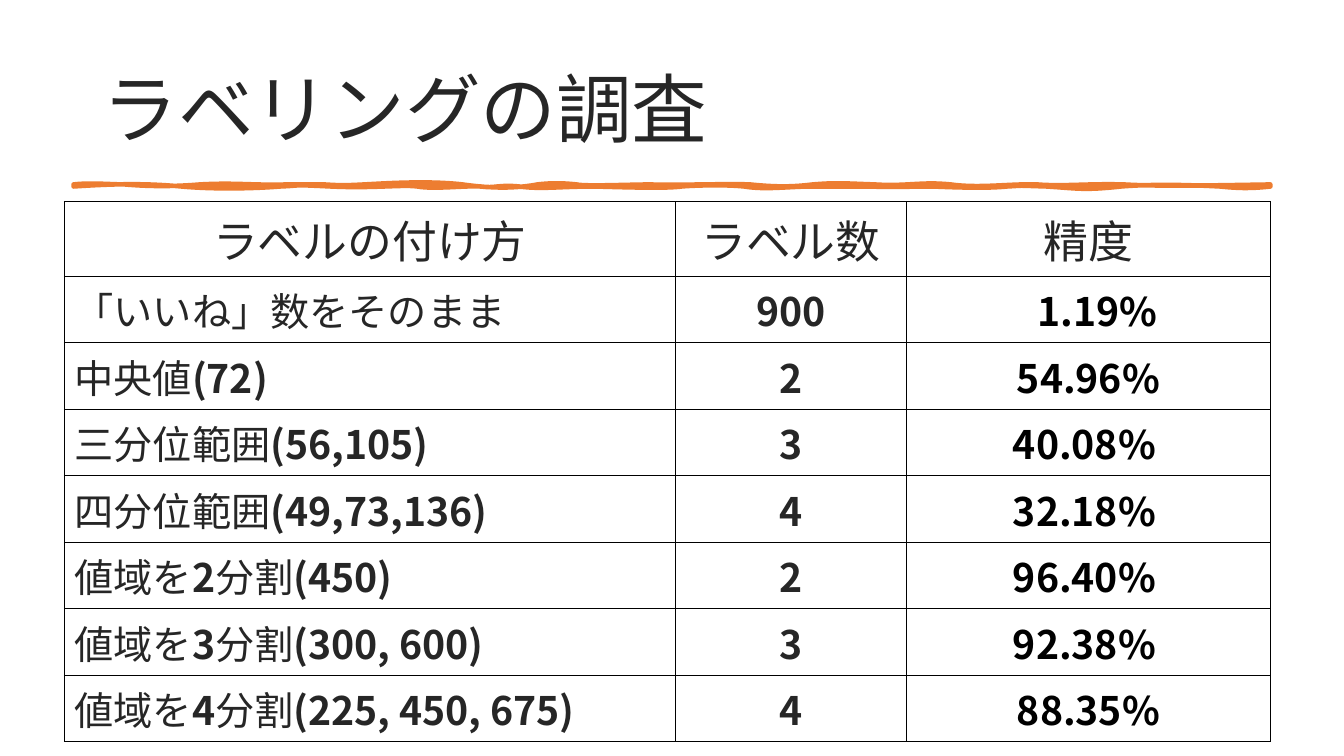
"""Build the slide that compares labelling methods by accuracy."""
import pptx
import pptx.dml.color
import pptx.enum.text
import pptx.oxml
import pptx.oxml.ns
import pptx.util

Inches = pptx.util.Inches
ALIGN = pptx.enum.text.PP_ALIGN
NAMESPACE = pptx.oxml.ns.nsdecls("a")
FONT = "Noto Sans CJK JP"
DARK = pptx.dml.color.RGBColor(0x26, 0x26, 0x26)
BLACK = pptx.dml.color.RGBColor(0, 0, 0)
ORANGE = pptx.dml.color.RGBColor(0xED, 0x7D, 0x31)

TITLE = "ラベリングの調査"
HEADERS = ["ラベルの付け方", "ラベル数", "精度"]
METHODS = [
    (["「いいね」数をそのまま"], "900", "1.19%", 0.18),
    (["中央値", "(72)"], "2", "54.96%", 0),
    (["三分位範囲", "(56,105)"], "3", "40.08%", -0.08),
    (["四分位範囲", "(49,73,136)"], "4", "32.18%", -0.08),
    (["値域を", "2", "分割", "(450)"], "2", "96.40%", -0.08),
    (["値域を", "3", "分割", "(300, 600)"], "3", "92.38%", -0.08),
    (["値域を", "4", "分割", "(225, 450, 675)"], "4", "88.35%", 0),
]
COLUMN_WIDTHS = [6.06, 2.29, 3.61]
HEADER_HEIGHT, ROW_HEIGHT = 0.74, 0.66
CELL_MARGIN = 0.1

RULE_LEFT, RULE_RIGHT, RULE_TOP, RULE_BOTTOM = 0.73, 12.6, 1.83, 1.85
TOP_CURVES = [
    (0.89, 1.81, 1.11, 1.83, 1.24), (1.36, 1.84, 1.62, 1.86, 1.98),
    (2.34, 1.81, 2.51, 1.84, 2.84), (3.17, 1.83, 3.07, 1.83, 3.22),
    (3.38, 1.84, 3.42, 1.84, 3.61), (3.8, 1.82, 4.24, 1.79, 4.59),
    (4.94, 1.88, 5.17, 1.86, 5.33), (5.49, 1.81, 5.63, 1.82, 5.72),
    (5.81, 1.85, 6.25, 1.83, 6.46), (6.67, 1.84, 7.23, 1.82, 7.44),
    (7.65, 1.85, 7.82, 1.86, 8.06), (8.3, 1.81, 8.38, 1.82, 8.68),
    (8.99, 1.85, 9.14, 1.8, 9.43), (9.72, 1.87, 10.02, 1.82, 10.29),
    (10.55, 1.85, 10.78, 1.82, 11.15), (11.51, 1.85, 11.99, 1.84, 12.6),
]
BOTTOM_CURVES = [
    (12.42, 1.87, 12.3, 1.87, 12.1), (11.9, 1.84, 11.49, 1.82, 11.12),
    (10.75, 1.89, 10.7, 1.87, 10.38), (10.05, 1.84, 10.18, 1.84, 9.99),
    (9.8, 1.87, 9.48, 1.86, 9.25), (9.02, 1.85, 8.84, 1.86, 8.63),
    (8.41, 1.85, 8.28, 1.85, 8), (7.73, 1.86, 7.57, 1.88, 7.38),
    (7.19, 1.83, 6.88, 1.84, 6.76), (6.63, 1.87, 6.24, 1.86, 5.9),
    (5.55, 1.85, 5.37, 1.88, 5.15), (4.94, 1.83, 4.91, 1.87, 4.77),
    (4.63, 1.84, 4.3, 1.88, 4.14), (3.99, 1.83, 3.71, 1.87, 3.28),
    (2.86, 1.83, 3.03, 1.84, 2.78), (2.53, 1.87, 2.13, 1.88, 1.8),
    (1.47, 1.82, 1.18, 1.82, 0.73),
]


def write(frame, parts, size=28, color=DARK, align=ALIGN.LEFT, bold=False):
    """Write parts as runs whose weight alternates, the first as bold says."""
    paragraph = frame.paragraphs[0]
    paragraph.alignment = align
    for index, part in enumerate(parts):
        run = paragraph.add_run()
        run.text = part
        run.font.size = pptx.util.Pt(size)
        run.font.name = FONT
        run.font.bold = bold != (index % 2 == 1)
        run.font.color.rgb = color
        east_asian = pptx.oxml.parse_xml(f'<a:ea {NAMESPACE} typeface="{FONT}"/>')
        run.font._element.find(pptx.oxml.ns.qn("a:latin")).addnext(east_asian)
    return paragraph


def add_title(slide):
    """Add the heading."""
    box = slide.shapes.add_textbox(Inches(0.92), Inches(0.4), Inches(11.5), Inches(1.45))
    box.text_frame.word_wrap = True
    box.text_frame.vertical_anchor = pptx.enum.text.MSO_ANCHOR.MIDDLE
    write(box.text_frame, [TITLE], size=54).line_spacing = 0.9


def bend(segment, *points):
    """Turn a straight outline segment into a cubic curve through the controls."""
    marks = "".join(
        f'<a:pt x="{Inches(x - RULE_LEFT)}" y="{Inches(y - RULE_TOP)}"/>' for x, y in points)
    segment.getparent().replace(segment, pptx.oxml.parse_xml(
        f'<a:cubicBezTo {NAMESPACE}>{marks}</a:cubicBezTo>'))


def add_rule(slide):
    """Add the hand-drawn rule under the heading."""
    top = [(curve, RULE_TOP) for curve in TOP_CURVES]
    bottom = [(curve, RULE_BOTTOM) for curve in BOTTOM_CURVES]
    corner = [((), RULE_BOTTOM)]
    edges = top + corner + bottom
    builder = slide.shapes.build_freeform(Inches(RULE_LEFT), Inches(RULE_TOP))
    builder.add_line_segments(
        [(Inches(curve[-1] if curve else RULE_RIGHT), Inches(level))
         for curve, level in edges], close=True)
    rule = builder.convert_to_shape()
    segments = list(rule._element.iter(pptx.oxml.ns.qn("a:lnTo")))
    for segment, (curve, level) in zip(segments, edges):
        if curve:
            bend(segment, curve[:2], curve[2:4], (curve[4], level))
    rule.shadow.inherit = False
    rule.fill.solid()
    rule.fill.fore_color.rgb = ORANGE
    rule.line.color.rgb = ORANGE
    rule.line.width = pptx.util.Pt(3.25)


def set_borders(cell):
    """Leave the cell unfilled and outline it in black."""
    cell.fill.background()
    properties = cell._tc.get_or_add_tcPr()
    for index, side in enumerate(("lnL", "lnR", "lnT", "lnB")):
        properties.insert(index, pptx.oxml.parse_xml(
            f'<a:{side} {NAMESPACE} w="12700"><a:solidFill>'
            f'<a:srgbClr val="{BLACK}"/></a:solidFill></a:{side}>'))


def add_table(slide):
    """Add the comparison table."""
    height = HEADER_HEIGHT + ROW_HEIGHT * len(METHODS)
    table = slide.shapes.add_table(
        len(METHODS) + 1, len(HEADERS), Inches(0.64), Inches(2),
        Inches(sum(COLUMN_WIDTHS)), Inches(height)).table
    table.first_row = False
    table.horz_banding = False
    for column, width in zip(table.columns, COLUMN_WIDTHS):
        column.width = Inches(width)
    for index, row in enumerate(table.rows):
        row.height = Inches(ROW_HEIGHT if index else HEADER_HEIGHT)
    for cell in table.iter_cells():
        set_borders(cell)
    for column, header in enumerate(HEADERS):
        write(table.cell(0, column).text_frame, [header], size=32, align=ALIGN.CENTER)
    for row, (method, count, accuracy, nudge) in enumerate(METHODS, 1):
        write(table.cell(row, 0).text_frame, method)
        write(table.cell(row, 1).text_frame, [count], align=ALIGN.CENTER, bold=True)
        cell = table.cell(row, 2)
        cell.margin_left = Inches(CELL_MARGIN + max(nudge, 0))
        cell.margin_right = Inches(CELL_MARGIN + max(-nudge, 0))
        write(cell.text_frame, [accuracy], color=BLACK, align=ALIGN.CENTER, bold=True)


def main():
    """Build and save the presentation."""
    presentation = pptx.Presentation()
    presentation.slide_width = Inches(13.33)
    presentation.slide_height = Inches(7.5)
    slide = presentation.slides.add_slide(presentation.slide_layouts[6])
    add_title(slide)
    add_rule(slide)
    add_table(slide)
    presentation.save("out.pptx")


if __name__ == "__main__":
    main()
